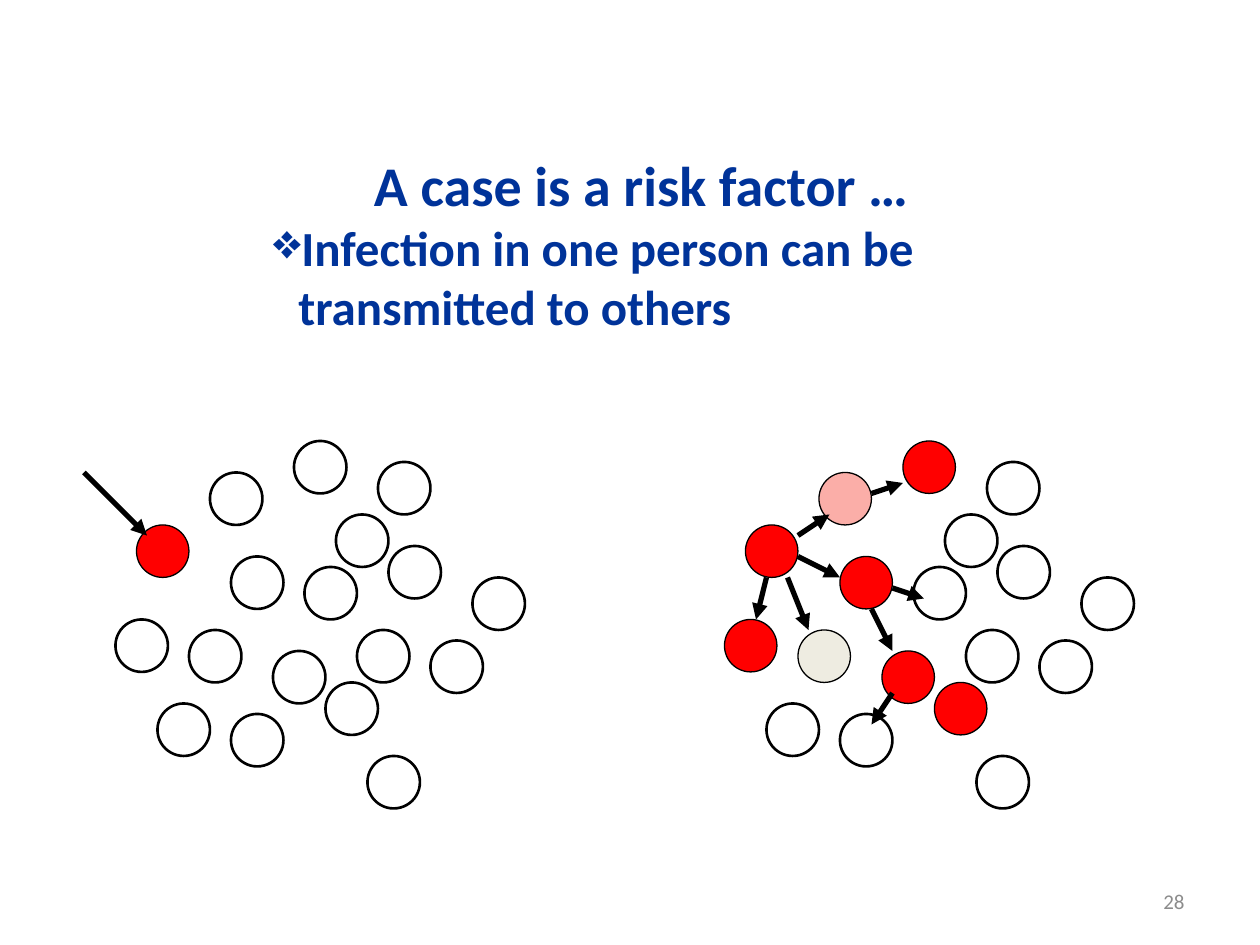
from lxml.etree import SubElement
from pptx import Presentation
from pptx.dml.color import RGBColor
from pptx.enum.shapes import MSO_CONNECTOR, MSO_SHAPE
from pptx.enum.text import MSO_ANCHOR, PP_ALIGN
from pptx.oxml.ns import qn
from pptx.util import Inches, Pt

BLACK = RGBColor(0x00, 0x00, 0x00)
RED = RGBColor(0xFF, 0x00, 0x00)
PINK = RGBColor(0xF9, 0x5F, 0x53)
BEIGE = RGBColor(0xEE, 0xEC, 0xE1)
NAVY = RGBColor(0x00, 0x33, 0x99)
GREY = RGBColor(0x8C, 0x8C, 0x8C)

CELL = Inches(1) / 12
COLUMNS, ROWS = 120, 90
PERSON_SIZE = 5
GROUP_SHIFT = 58

TITLE = {"size": Pt(32), "bold": True, "color": NAVY}
POINT = {**TITLE, "size": Pt(28)}
NUMBER = {"size": Pt(12), "color": GREY}

PEOPLE = [
    (13, 50), (20, 45), (35, 72), (22, 53), (28, 42), (36, 44),
    (37, 52), (41, 61), (45, 55), (22, 68), (15, 67), (34, 60),
    (26, 62), (18, 60), (29, 54), (11, 59), (32, 49), (31, 65),
]
FIRST_CASE = {(13, 50): RED}
SPREAD = {
    **dict.fromkeys([(13, 50), (31, 65), (22, 53), (28, 42), (26, 62), (11, 59)], RED),
    (20, 45): PINK,
    (18, 60): BEIGE,
}
TRANSMISSIONS = [
    ((73, 55), (72, 59)), ((76, 53), (80, 55)), ((83, 58), (85, 62)),
    ((76, 51), (79, 49)), ((83, 47), (86, 46)), ((85, 56), (88, 57)),
    ((85, 66), (83, 69)), ((8, 45), (14, 51)), ((75, 55), (77, 60)),
]


class SlideBuilder:
    """Draws styled elements on one slide, measured in grid cells."""

    def __init__(self, slide, font_name="Calibri"):
        self.slide = slide
        self.font_name = font_name

    def lengths(self, *cells):
        return [round(cell * CELL) for cell in cells]

    def text_box(self, left, top, width, height, anchor):
        shape = self.slide.shapes.add_textbox(*self.lengths(left, top, width, height))
        frame = shape.text_frame
        frame.word_wrap = True
        frame.vertical_anchor = anchor
        return frame

    def add_text(self, paragraph, text, values, alignment):
        paragraph.alignment = alignment
        run = paragraph.add_run()
        run.text = text
        run.font.name = self.font_name
        for name, value in values.items():
            if name == "color":
                run.font.color.rgb = value
            else:
                setattr(run.font, name, value)

    def bullet(self, paragraph, symbol, margin, indent):
        properties = paragraph._p.get_or_add_pPr()
        for name, value in {"marL": margin, "indent": indent}.items():
            properties.set(name, str(value))
        SubElement(properties, qn("a:buChar"), char=symbol)

    def person(self, left, top, color=None):
        shape = self.slide.shapes.add_shape(
            MSO_SHAPE.OVAL, *self.lengths(left, top, PERSON_SIZE, PERSON_SIZE))
        shape.shadow.inherit = False
        shape.line.color.rgb = BLACK
        shape.line.width = Pt(0.75 if color else 1.5)
        if color is None:
            shape.fill.background()
            return
        shape.fill.solid()
        shape.fill.fore_color.rgb = color
        if color == PINK:
            fill_color = shape._element.spPr.find(qn("a:solidFill"))[0]
            SubElement(fill_color, qn("a:alpha"), val="50000")

    def population(self, shift, colors):
        for left, top in PEOPLE:
            self.person(left + shift, top, colors.get((left, top)))

    def arrow(self, start, end):
        connector = self.slide.shapes.add_connector(
            MSO_CONNECTOR.STRAIGHT, *self.lengths(*start, *end))
        connector.line.color.rgb = BLACK
        connector.line.width = Pt(3)
        SubElement(connector.line._get_or_add_ln(), qn("a:tailEnd"), type="triangle")
        SubElement(connector._element.spPr, qn("a:effectLst"))


def main():
    presentation = Presentation()
    presentation.slide_width = round(COLUMNS * CELL)
    presentation.slide_height = round(ROWS * CELL)
    slide = presentation.slides.add_slide(presentation.slide_layouts[6])
    builder = SlideBuilder(slide)

    builder.population(0, FIRST_CASE)
    builder.population(GROUP_SHIFT, SPREAD)
    for start, end in TRANSMISSIONS:
        builder.arrow(start, end)

    heading = builder.text_box(21.6, 13.75, 79, 19.2, MSO_ANCHOR.TOP)
    builder.add_text(heading.paragraphs[0], "A case is a risk factor …", TITLE, PP_ALIGN.CENTER)
    point = heading.add_paragraph()
    builder.bullet(point, "❖", Inches(0.47), Inches(-0.2))
    builder.add_text(point, "Infection in one person can be transmitted to others",
                     POINT, PP_ALIGN.LEFT)

    number = builder.text_box(86, 83.4, 28, 4.8, MSO_ANCHOR.MIDDLE)
    builder.add_text(number.paragraphs[0], "28", NUMBER, PP_ALIGN.RIGHT)

    presentation.save("out.pptx")


if __name__ == "__main__":
    main()
